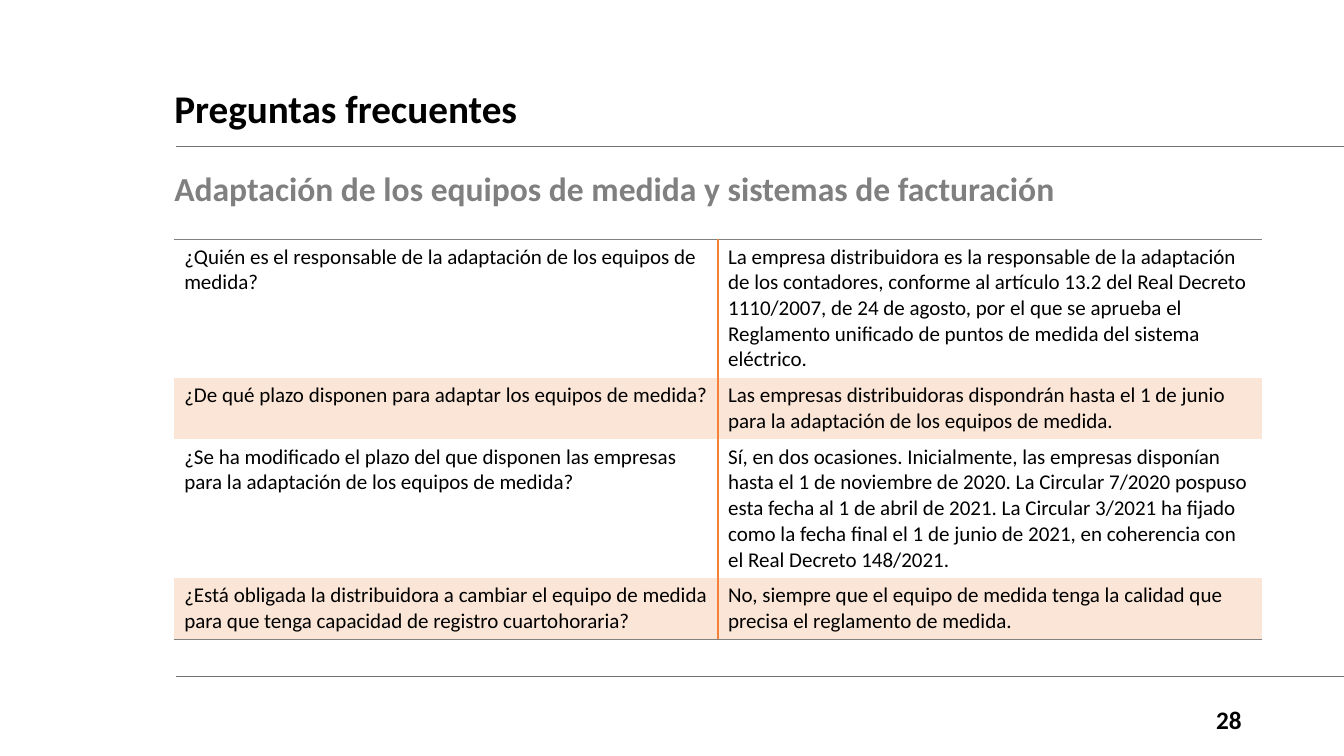
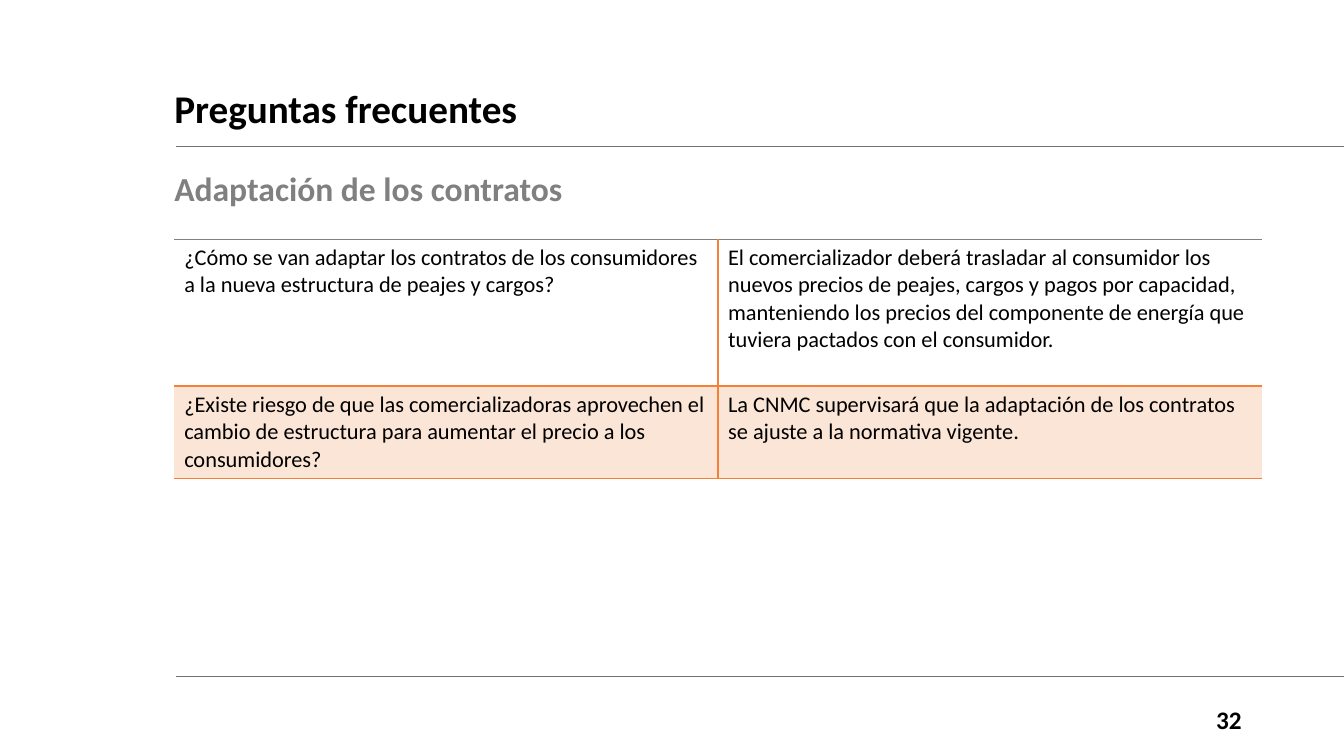
import lxml.etree
import pptx
import pptx.dml.color
import pptx.enum.shapes
import pptx.enum.text
import pptx.oxml.ns
import pptx.util

Pt = pptx.util.Pt
Align = pptx.enum.text.PP_ALIGN
Anchor = pptx.enum.text.MSO_ANCHOR
qn = pptx.oxml.ns.qn


class Deck:
    """Holds the shared style and the current slide of the deck."""

    font = "Calibri"
    wide, high = 960, 540
    hues = {
        "ink": "000000",
        "mute": "808080",
        "rule": "767171",
        "edge": "F58139",
        "band": "FBE5D6",
    }

    def __init__(self):
        self.show = pptx.Presentation()
        self.show.slide_width = Pt(self.wide)
        self.show.slide_height = Pt(self.high)

    def hue(self, name):
        return pptx.dml.color.RGBColor.from_string(self.hues[name])

    def page(self, title, topic, num):
        self.slide = self.show.slides.add_slide(self.show.slide_layouts[6])
        for y in (104.5, 483):
            self.rule(126, y, self.wide)
        self.text(title, (117.4, 49, 777, 60), 28, anchor=Anchor.MIDDLE, lead=0.9)
        self.text(topic, (117.4, 119.5, 777, 39.6), 24, "mute", lead=0.9)
        self.text(str(num), (843, 499, 51, 29), 18, align=Align.RIGHT, anchor=Anchor.MIDDLE)

    def rule(self, left, y, right):
        kind = pptx.enum.shapes.MSO_CONNECTOR.STRAIGHT
        line = self.slide.shapes.add_connector(kind, Pt(left), Pt(y), Pt(right), Pt(y))
        line.line.color.rgb = self.hue("rule")
        line.line.width = Pt(0.5)
        lxml.etree.SubElement(line._element.spPr, qn("a:effectLst"))

    def run(self, para, words, size, tone="ink", bold=False):
        run = para.add_run()
        run.text = words
        run.font.name = self.font
        run.font.size = Pt(size)
        run.font.bold = bold
        run.font.color.rgb = self.hue(tone)

    def text(self, words, area, size, tone="ink", align=Align.LEFT, anchor=Anchor.TOP, lead=1.0):
        frame = self.slide.shapes.add_textbox(*map(Pt, area)).text_frame
        frame.word_wrap = True
        frame.vertical_anchor = anchor
        para = frame.paragraphs[0]
        para.alignment = align
        para.line_spacing = lead
        self.run(para, words, size, tone, bold=True)

    def edge(self, cell, side, style):
        line = lxml.etree.SubElement(cell._tc.get_or_add_tcPr(), qn("a:ln" + side))
        if style is None:
            lxml.etree.SubElement(line, qn("a:noFill"))
            return
        tone, width = style
        line.set("w", str(Pt(width)))
        fill = lxml.etree.SubElement(line, qn("a:solidFill"))
        lxml.etree.SubElement(fill, qn("a:srgbClr")).set("val", self.hues[tone])

    def table(self, rows, highs, size, inner, base):
        frame = self.slide.shapes.add_table(
            len(rows), 2, Pt(124.4), Pt(170.7), Pt(777), Pt(sum(highs)))
        grid = frame.table
        grid.first_row = grid.horz_banding = False
        split = ("edge", 1)
        lines = [("mute", 0.5)] + [inner] * (len(rows) - 1) + [base]
        for r, pair in enumerate(rows):
            grid.rows[r].height = Pt(highs[r])
            for c, words in enumerate(pair):
                cell = grid.cell(r, c)
                self.edge(cell, "L", split if c else None)
                self.edge(cell, "R", None if c else split)
                self.edge(cell, "T", lines[r])
                self.edge(cell, "B", lines[r + 1])
                if r % 2:
                    cell.fill.solid()
                    cell.fill.fore_color.rgb = self.hue("band")
                else:
                    cell.fill.background()
                self.run(cell.text_frame.paragraphs[0], words, size)


def main():
    deck = Deck()
    title = "Preguntas frecuentes"

    deck.page(title, "Adaptación de los equipos de medida y sistemas de facturación", 28)
    deck.table([
        ("¿Quién es el responsable de la adaptación de los equipos de medida?",
         "La empresa distribuidora es la responsable de la adaptación de los contadores, "
         "conforme al artículo 13.2 del Real Decreto 1110/2007, de 24 de agosto, por el que "
         "se aprueba el Reglamento unificado de puntos de medida del sistema eléctrico."),
        ("¿De qué plazo disponen para adaptar los equipos de medida?",
         "Las empresas distribuidoras dispondrán hasta el 1 de junio para la adaptación "
         "de los equipos de medida."),
        ("¿Se ha modificado el plazo del que disponen las empresas para la adaptación "
         "de los equipos de medida?",
         "Sí, en dos ocasiones. Inicialmente, las empresas disponían hasta el 1 de noviembre "
         "de 2020. La Circular 7/2020 pospuso esta fecha al 1 de abril de 2021. La Circular "
         "3/2021 ha fijado como la fecha final el 1 de junio de 2021, en coherencia con el "
         "Real Decreto 148/2021."),
        ("¿Está obligada la distribuidora a cambiar el equipo de medida para que tenga "
         "capacidad de registro cuartohoraria?",
         "No, siempre que el equipo de medida tenga la calidad que precisa el reglamento "
         "de medida."),
    ], [99, 44, 99, 44], 15, None, ("mute", 0.5))

    deck.page(title, "Adaptación de los contratos", 32)
    deck.table([
        ("¿Cómo se van adaptar los contratos de los consumidores a la nueva estructura "
         "de peajes y cargos?",
         "El comercializador deberá trasladar al consumidor los nuevos precios de peajes, "
         "cargos y pagos por capacidad, manteniendo los precios del componente de energía "
         "que tuviera pactados con el consumidor."),
        ("¿Existe riesgo de que las comercializadoras aprovechen el cambio de estructura "
         "para aumentar el precio a los consumidores?",
         "La CNMC supervisará que la adaptación de los contratos se ajuste a la normativa "
         "vigente."),
    ], [105, 66], 16, ("edge", 1), ("edge", 1))

    deck.show.save("out.pptx")


if __name__ == "__main__":
    main()
